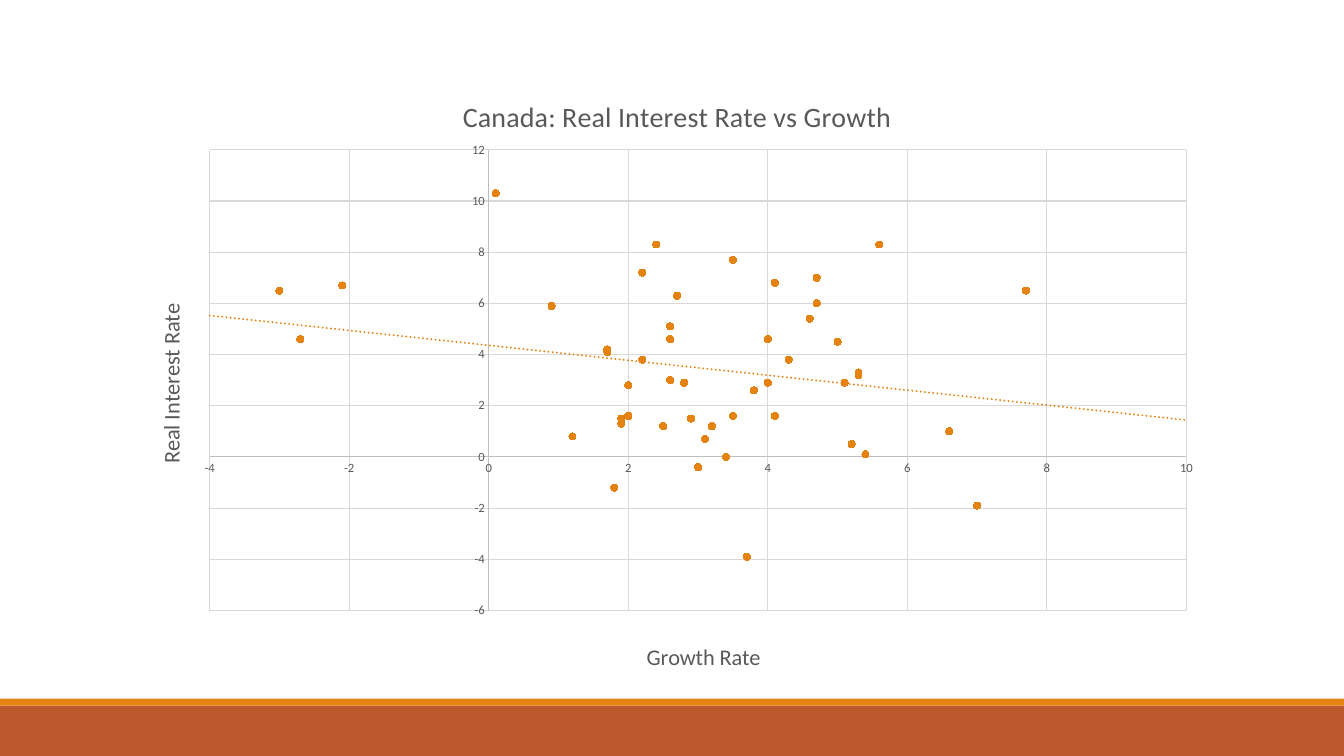
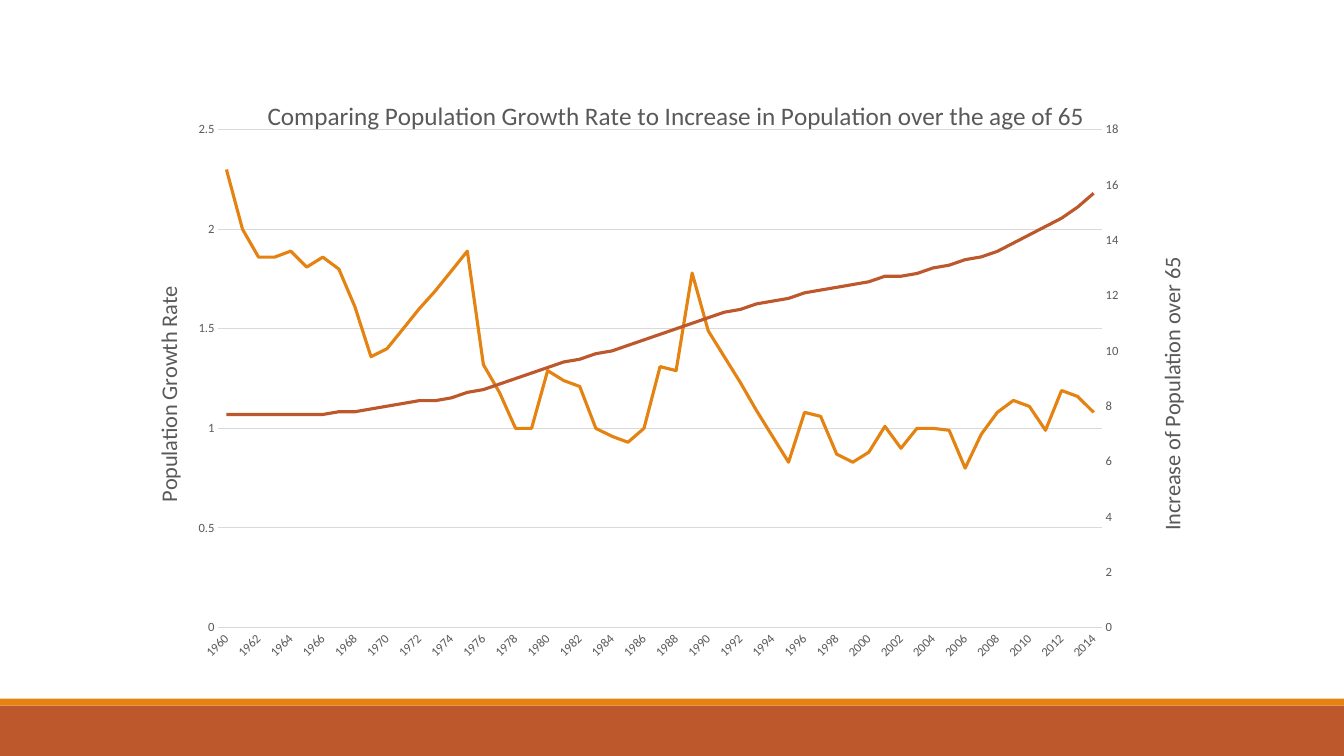
from copy import deepcopy

from lxml import etree
from pptx import Presentation
from pptx.chart.axis import ValueAxis
from pptx.chart.data import CategoryChartData, XyChartData
from pptx.dml.color import RGBColor
from pptx.enum.chart import XL_CHART_TYPE, XL_MARKER_STYLE, XL_TICK_MARK
from pptx.enum.shapes import MSO_SHAPE
from pptx.oxml import parse_xml
from pptx.oxml.ns import qn
from pptx.util import Pt

RECTANGLE = MSO_SHAPE.RECTANGLE
SCATTER, LINE = XL_CHART_TYPE.XY_SCATTER, XL_CHART_TYPE.LINE
CIRCLE, NO_MARKER = XL_MARKER_STYLE.CIRCLE, XL_MARKER_STYLE.NONE
NO_TICK = XL_TICK_MARK.NONE

color = RGBColor.from_string
ORANGE, RUST = "E48312", "BD582C"
TEXT, AXIS, GRID = "595959", "BFBFBF", "D9D9D9"
FONT = "Calibri"
BANDS = [(504, 36, RUST), (499, 5, ORANGE)]  # top, height, fill


def style_title(title, text, size, left, top, rotation=0):
    """Write a chart or axis title; left and top are fractions of the chart."""
    title.text_frame.text = text
    font = title.text_frame.paragraphs[0].runs[0].font
    font.name, font.size, font.bold = FONT, Pt(size), False
    font.color.rgb = color(TEXT)
    title.element.find(".//" + qn("a:bodyPr")).set("rot", str(rotation * 60000))
    layout = title.element.find(qn("c:layout"))
    if layout is None:
        layout = etree.Element(qn("c:layout"))
        title.element.find(qn("c:tx")).addnext(layout)
    manual = etree.SubElement(layout, qn("c:manualLayout"))
    for tag, value in (("xMode", "edge"), ("yMode", "edge"), ("x", left), ("y", top)):
        etree.SubElement(manual, qn("c:" + tag)).set("val", str(value))


def style_axis(axis, line=None, grid=None, scale=None):
    """Set labels, axis line, gridlines and (minimum, maximum, step)."""
    axis.major_tick_mark = axis.minor_tick_mark = NO_TICK
    font = axis.tick_labels.font
    font.name, font.size, font.color.rgb = FONT, Pt(9), color(TEXT)
    if line:
        axis.format.line.color.rgb = color(line)
        axis.format.line.width = Pt(0.75)
    else:
        axis.format.line.fill.background()
    axis.has_major_gridlines = bool(grid)
    if grid:
        axis.major_gridlines.format.line.color.rgb = color(grid)
        axis.major_gridlines.format.line.width = Pt(0.75)
    if scale:
        axis.minimum_scale, axis.maximum_scale, axis.major_unit = scale


# Data: growth rate and real interest rate
growth = [6.6, 2.9, 5.3, 5.3, 7.7, 4.1, 5.4, 7, 3.7, 1.8, 5.2, 3.5, 4, 3.8, 2.2, 3.5, -3,
          2.6, 5.6, 4.7, 2.2, 4, 4.7, 2.4, 0.1, -2.1, 0.9, 2.6, 4.6, 2.7, 1.7, 4.3, 4.1, 5,
          5.1, 1.7, 2.8, 1.9, 3.1, 3.2, 2.6, 2, 1.2, -2.7, 3.4, 3, 1.9, 2, 2.5]
interest = [1, 1.5, 3.2, 3.3, 6.5, 1.6, 0.1, -1.9, -3.9, -1.2, 0.5, 1.6, 2.9, 2.6, 3.8, 7.7,
            6.5, 5.1, 8.3, 7, 7.2, 4.6, 6, 8.3, 10.3, 6.7, 5.9, 4.6, 5.4, 6.3, 4.2, 3.8, 6.8,
            4.5, 2.9, 4.1, 2.9, 1.3, 0.7, 1.2, 3, 2.8, 0.8, 4.6, 0, -0.4, 1.5, 1.6, 1.2]
scatter_data = XyChartData()
points = scatter_data.add_series("Real Interest Rate")
for x, y in zip(growth, interest):
    points.add_data_point(x, y)

# Data: population, 1960 to 2014
population_data = CategoryChartData()
population_data.categories = [str(year) for year in range(1960, 2015)]
population_data.add_series("Population Growth Rate", [
    2.3, 2, 1.86, 1.86, 1.89, 1.81, 1.86, 1.8, 1.61, 1.36, 1.4, 1.5, 1.6, 1.69, 1.79, 1.89,
    1.32, 1.18, 1, 1, 1.29, 1.24, 1.21, 1, 0.96, 0.93, 1, 1.31, 1.29, 1.78, 1.49, 1.36, 1.23,
    1.09, 0.96, 0.83, 1.08, 1.06, 0.87, 0.83, 0.88, 1.01, 0.9, 1, 1, 0.99, 0.8, 0.97, 1.08,
    1.14, 1.11, 0.99, 1.19, 1.16, 1.08])
population_data.add_series("Population over 65", [
    7.7, 7.7, 7.7, 7.7, 7.7, 7.7, 7.7, 7.8, 7.8, 7.9, 8, 8.1, 8.2, 8.2, 8.3, 8.5, 8.6, 8.8, 9,
    9.2, 9.4, 9.6, 9.7, 9.9, 10, 10.2, 10.4, 10.6, 10.8, 11, 11.2, 11.4, 11.5, 11.7, 11.8,
    11.9, 12.1, 12.2, 12.3, 12.4, 12.5, 12.7, 12.7, 12.8, 13, 13.1, 13.3, 13.4, 13.6, 13.9,
    14.2, 14.5, 14.8, 15.2, 15.7])

presentation = Presentation()
presentation.slide_width, presentation.slide_height = Pt(960), Pt(540)

# Both slides: footer bands, one chart and its plot area
slide_plans = [
    (SCATTER, scatter_data, (91.5, 49, 777, 443), (0.075, 0.131, 0.898, 0.743)),
    (LINE, population_data, (101.5, 50.5, 757.5, 439), (0.072, 0.096, 0.833, 0.81)),
]
charts = []
for chart_type, data, frame, plot_layout in slide_plans:
    slide = presentation.slides.add_slide(presentation.slide_layouts[6])
    for top, height, fill in BANDS:
        band = slide.shapes.add_shape(RECTANGLE, 0, Pt(top), Pt(960), Pt(height))
        band.shadow.inherit = False
        band.fill.solid()
        band.fill.fore_color.rgb = color(fill)
        band.line.fill.background()
    chart = slide.shapes.add_chart(chart_type, *map(Pt, frame), data).chart
    chart.has_legend = False
    chart.has_title = True
    chart.font.name, chart.font.size = FONT, Pt(10)
    chart.plots[0].vary_by_categories = False
    plot_area = chart.element.find(".//" + qn("c:plotArea"))
    layout = plot_area.find(qn("c:layout"))
    if layout is None:
        layout = etree.Element(qn("c:layout"))
        plot_area.insert(0, layout)
    manual = etree.SubElement(layout, qn("c:manualLayout"))
    settings = ("inner", "edge", "edge", *plot_layout)
    for tag, value in zip(("layoutTarget", "xMode", "yMode", "x", "y", "w", "h"), settings):
        etree.SubElement(manual, qn("c:" + tag)).set("val", str(value))
    charts.append(chart)
scatter, population = charts

# Slide 1: scatter chart
style_title(scatter.chart_title, "Canada: Real Interest Rate vs Growth", 20, 0.303, 0.038)
style_axis(scatter.category_axis, AXIS, GRID, (-4, 10, 2))
style_axis(scatter.value_axis, AXIS, GRID, (-6, 12, 2))
style_title(scatter.category_axis.axis_title, "Growth Rate", 16, 0.473, 0.917)
style_title(scatter.value_axis.axis_title, "Real Interest Rate", 16, 0.022, 0.373, -90)
series = scatter.plots[0].series[0]
series.format.line.fill.background()
series.marker.style, series.marker.size = CIRCLE, 5
series.marker.format.fill.solid()
series.marker.format.fill.fore_color.rgb = color(ORANGE)
series.marker.format.line.color.rgb = color(ORANGE)

# Linear trend line across the whole plot
trend = parse_xml(
    '<c:trendline xmlns:c="http://schemas.openxmlformats.org/drawingml/2006/chart" '
    'xmlns:a="http://schemas.openxmlformats.org/drawingml/2006/main">'
    f'<c:spPr><a:ln w="{Pt(1.5)}" cap="rnd"><a:solidFill><a:srgbClr val="{ORANGE}"/>'
    '</a:solidFill><a:prstDash val="sysDot"/></a:ln></c:spPr>'
    '<c:trendlineType val="linear"/><c:forward val="2.3"/><c:backward val="1"/>'
    '<c:dispRSqr val="0"/><c:dispEq val="0"/></c:trendline>')
scatter.element.find(".//" + qn("c:xVal")).addprevious(trend)

# Slide 2: line chart
style_title(population.chart_title,
            "Comparing Population Growth Rate to Increase in Population over the age of 65",
            18, 0.114, 0.037)
for series, line_color in zip(population.plots[0].series, (ORANGE, RUST)):
    series.smooth = False
    series.marker.style = NO_MARKER
    series.format.line.color.rgb = color(line_color)
    series.format.line.width = Pt(2.25)
left_axis = population.value_axis
style_axis(population.category_axis, GRID)
years_element = population.element.find(".//" + qn("c:catAx"))
years_element.find(qn("c:txPr")).find(qn("a:bodyPr")).set("rot", str(-45 * 60000))
label_skip = etree.Element(qn("c:tickLblSkip"))
label_skip.set("val", "2")
years_element.find(qn("c:noMultiLvlLbl")).addprevious(label_skip)

# Second series on its own axes
left_plot = population.element.find(".//" + qn("c:lineChart"))
left_element = population.element.find(".//" + qn("c:valAx"))
right_plot, right_element = deepcopy(left_plot), deepcopy(left_element)
hidden_years = deepcopy(years_element)
left_plot.remove(left_plot.findall(qn("c:ser"))[1])
right_plot.remove(right_plot.findall(qn("c:ser"))[0])
left_plot.addnext(right_plot)
left_element.addnext(right_element)
right_element.addnext(hidden_years)
for axis_id, value in zip(right_plot.findall(qn("c:axId")), ("5001", "5002")):
    axis_id.set("val", value)
for element, own_id, cross_id in ((hidden_years, "5001", "5002"), (right_element, "5002", "5001")):
    element.find(qn("c:axId")).set("val", own_id)
    element.find(qn("c:crossAx")).set("val", cross_id)
hidden_years.find(qn("c:delete")).set("val", "1")
right_element.find(qn("c:axPos")).set("val", "r")
right_element.find(qn("c:crosses")).set("val", "max")
right_axis = ValueAxis(right_element)

style_axis(left_axis, grid=GRID, scale=(0, 2.5, 0.5))
style_axis(right_axis, scale=(0, 18, 2))
style_title(left_axis.axis_title, "Population Growth Rate", 16, 0.007, 0.344, -90)
style_title(right_axis.axis_title, "Increase of Population over 65", 16, 0.953, 0.297, -90)

presentation.save("out.pptx")
